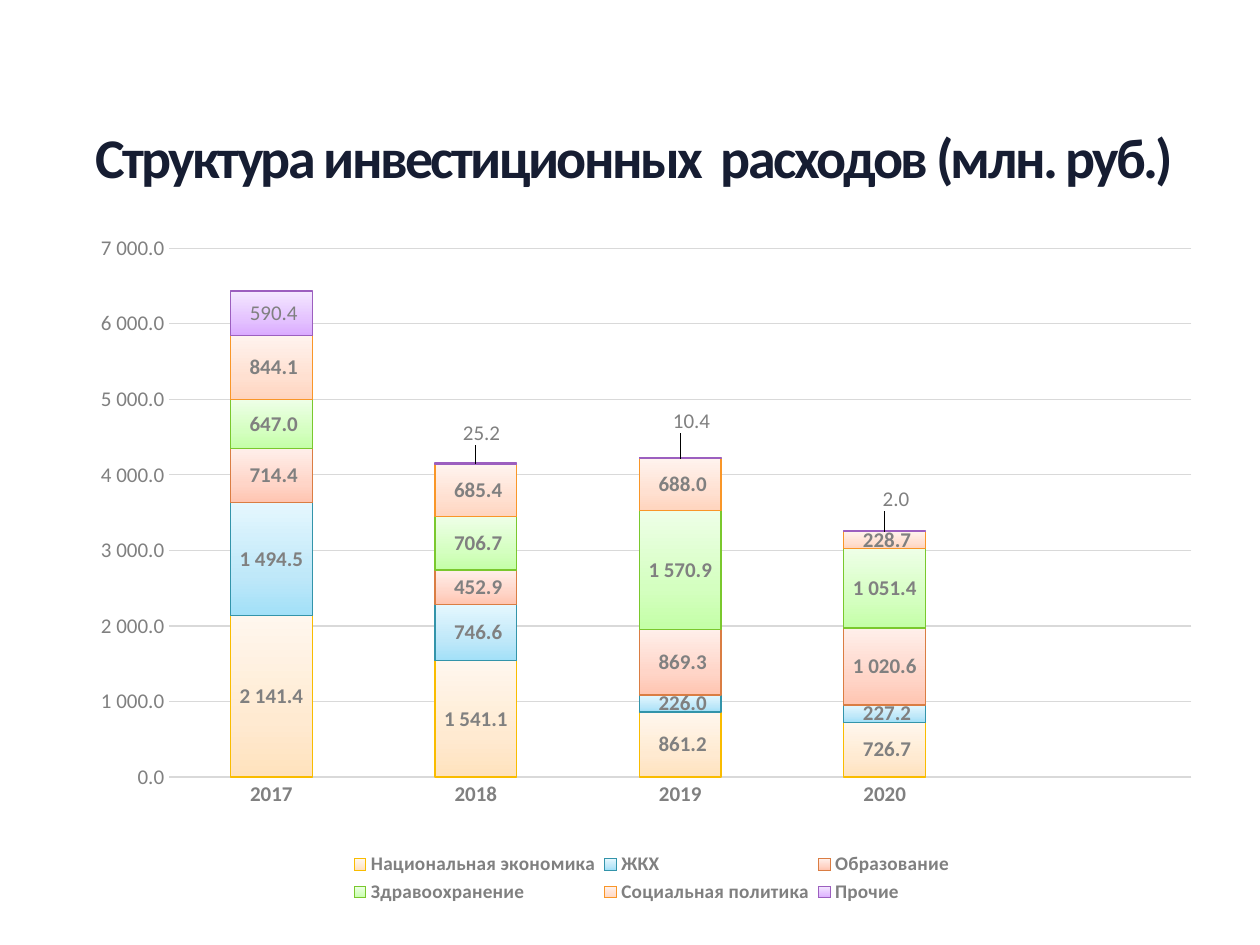
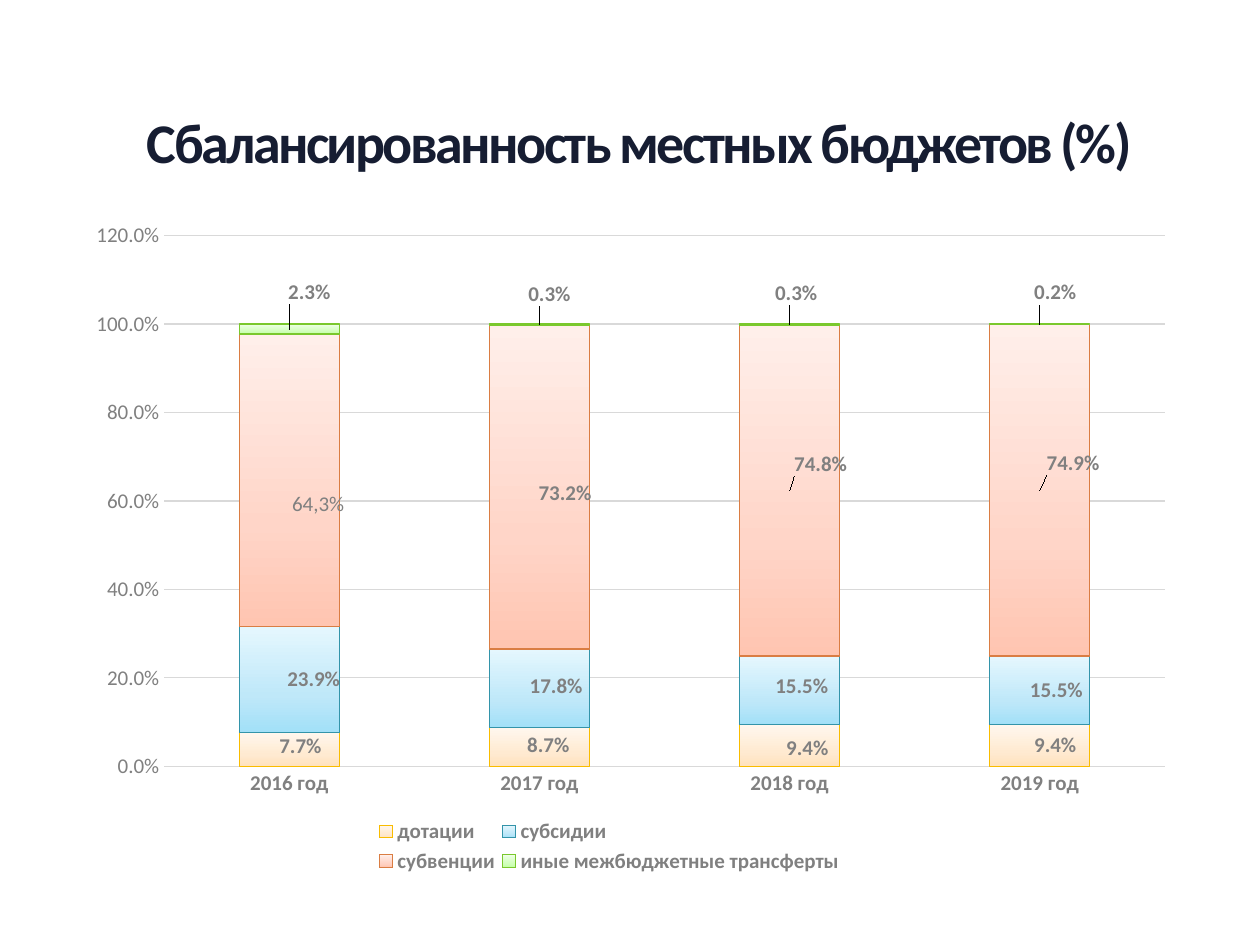
from pptx import Presentation
from pptx.chart.data import CategoryChartData
from pptx.dml.color import RGBColor
from pptx.enum.chart import XL_CHART_TYPE, XL_LEGEND_POSITION, XL_TICK_MARK
from pptx.enum.text import MSO_ANCHOR, MSO_AUTO_SIZE, PP_ALIGN
from pptx.oxml import parse_xml
from pptx.oxml.ns import nsdecls, qn
from pptx.util import Pt

STACKED = XL_CHART_TYPE.COLUMN_STACKED
LEGEND_BOTTOM = XL_LEGEND_POSITION.BOTTOM
NO_TICK = XL_TICK_MARK.NONE
CENTER = PP_ALIGN.CENTER
MIDDLE = MSO_ANCHOR.MIDDLE
NO_AUTOFIT = MSO_AUTO_SIZE.NONE

FONT = "Calibri"
GREY = RGBColor(0x80, 0x80, 0x80)
GRID = RGBColor(0xD9, 0xD9, 0xD9)
BLACK = RGBColor(0, 0, 0)
TITLE_STOPS = ((0, RGBColor(0x2E, 0x59, 0xB0)),
               (49, RGBColor(0x16, 0x1D, 0x32)),
               (100, BLACK))


def palette(line, *shades):
    """Pair an outline colour with the gradient stops of the fill."""
    colors = [RGBColor.from_string(shade) for shade in shades]
    return RGBColor.from_string(line), tuple(zip((0, 35, 100), colors))


SERIES_COLORS = (
    palette("F9BC00", "FFE2BD", "FFEAD1", "FFF7EE"),
    palette("3394AA", "A2E0F8", "BFE8F9", "E5F7FE"),
    palette("DA7D43", "FFC5B1", "FFD5C8", "FFEFEA"),
    palette("7AC82D", "C4FFA7", "D4FFC0", "EEFFE7"),
    palette("F99628", "FFD4BE", "FFE0D1", "FFF3EE"),
    palette("9C5FBF", "DAAAFF", "E4C2FF", "F4E8FF"),
)

INVESTMENT = {
    "title": "Структура инвестиционных  расходов (млн. руб.)",
    "title_box": (19.5, 66.25, 686, 50.5),
    "chart_box": (54, 116.5, 637, 402.5),
    "plot_area": (0.067, 0.063, 0.917, 0.751),
    "legend_area": (0.225, 0.915, 0.55, 0.085),
    "legend_size": 11,
    "number_format": r"#\ ##0.0",
    "maximum": 7000,
    "step": 1000,
    "categories": ("2017", "2018", "2019", "2020", ""),
    "series": (
        ("Национальная экономика", (2141.4, 1541.1, 861.2, 726.7, None)),
        ("ЖКХ", (1494.5, 746.6, 226, 227.2, None)),
        ("Образование", (714.4, 452.9, 869.3, 1020.6, None)),
        ("Здравоохранение", (647, 706.7, 1570.9, 1051.4, None)),
        ("Социальная политика", (844.1, 685.4, 688, 228.7, None)),
        ("Прочие", (590.4, 25.2, 10.4, 2, None)),
    ),
    "plain_series": ("Прочие",),
    # label shifts: series -> point -> fractions of the chart's width, height
    "label_shifts": {
        5: {1: (0.003, -0.044), 2: (0.008, -0.053), 3: (0.008, -0.045)},
    },
    "label_texts": {},
}

BUDGETS = {
    "title": "Сбалансированность местных бюджетов (%)",
    "title_box": (25, 54.75, 680.5, 57),
    "chart_box": (31, 116.5, 635, 385),
    "plot_area": (0.099, 0.047, 0.901, 0.788),
    "legend_area": (0.286, 0.907, 0.428, 0.093),
    "legend_size": 12,
    "number_format": "0.0%",
    "maximum": 1.2,
    "step": 0.2,
    "categories": [f"{year} год" for year in range(2016, 2020)],
    "series": (
        ("дотации", (0.077, 0.087, 0.094, 0.094)),
        ("субсидии", (0.239, 0.178, 0.155, 0.155)),
        ("субвенции", (0.661, 0.732, 0.748, 0.749)),
        ("иные межбюджетные трансферты", (0.023, 0.003, 0.003, 0.002)),
    ),
    "plain_series": (),
    "label_shifts": {
        0: {0: (0.01, -0.004), 1: (0.008, -0.003),
            2: (0.016, 0.004), 3: (0.014, 0)},
        1: {0: (0.022, 0), 1: (0.015, -0.004),
            2: (0.011, -0.006), 3: (0.015, -0.001)},
        2: {0: (0.026, 0.035), 1: (0.023, 0.009),
            2: (0.028, -0.04), 3: (0.03, -0.041)},
        3: {0: (0.018, -0.055), 1: (0.009, -0.045),
            2: (0.006, -0.047), 3: (0.014, -0.047)},
    },
    "label_texts": {(2, 0): "64,3%"},
}


def gradient(stops, angle):
    stop_xml = "".join(
        f'<a:gs pos="{position * 1000}"><a:srgbClr val="{color}"/></a:gs>'
        for position, color in stops)
    return parse_xml(
        f'<a:gradFill {nsdecls("a")} rotWithShape="1"><a:gsLst>{stop_xml}</a:gsLst>'
        f'<a:lin ang="{angle * 60000}" scaled="0"/></a:gradFill>')


def replace_solid_fill(properties, stops, angle):
    solid = properties.find(qn("a:solidFill"))
    properties.replace(solid, gradient(stops, angle))


def manual_layout(x, y, width=None, height=None, inner=False):
    """Chart layout: an edge-based area, or a shift if no size is given."""
    parts = []
    if inner:
        parts.append(("layoutTarget", "inner"))
    if width is not None:
        parts += [("xMode", "edge"), ("yMode", "edge")]
    parts += [("x", x), ("y", y)]
    if width is not None:
        parts += [("w", width), ("h", height)]
    body = "".join(f'<c:{tag} val="{value}"/>' for tag, value in parts)
    return parse_xml(f'<c:layout {nsdecls("c")}><c:manualLayout>{body}'
                     '</c:manualLayout></c:layout>')


def set_layout(parent, layout, index):
    for existing in parent.findall(qn("c:layout")):
        parent.remove(existing)
    parent.insert(index, layout)


def format_font(font, size=12, bold=False, color=GREY):
    font.name = FONT
    font.size = Pt(size)
    font.bold = bold
    font.color.rgb = color


def write_text(text_frame, text, size=12, bold=False, color=GREY):
    paragraph = text_frame.paragraphs[0]
    run = paragraph.add_run()
    run.text = text
    format_font(run.font, size, bold, color)
    return paragraph, run


def add_title(slide, text, box):
    title = slide.shapes.title
    title.left, title.top, title.width, title.height = map(Pt, box)
    frame = title.text_frame
    frame.margin_left = frame.margin_right = 0
    frame.margin_top = frame.margin_bottom = 0
    frame.word_wrap = True
    frame.auto_size = NO_AUTOFIT
    frame.vertical_anchor = MIDDLE
    paragraph, run = write_text(frame, text, size=32, bold=True)
    paragraph.alignment = CENTER
    paragraph.line_spacing = 0.9
    properties = run.font.fill and run._r.get_or_add_rPr()
    properties.set("spc", "-150")
    replace_solid_fill(properties, TITLE_STOPS, 90)


def format_axes(chart, content):
    category_axis, value_axis = chart.category_axis, chart.value_axis
    for axis in (category_axis, value_axis):
        axis.major_tick_mark = axis.minor_tick_mark = NO_TICK
        axis.format.line.fill.background()
        format_font(axis.tick_labels.font, bold=axis is category_axis)
    value_axis.minimum_scale = 0
    value_axis.maximum_scale = content["maximum"]
    value_axis.major_unit = content["step"]
    value_axis.tick_labels.number_format = content["number_format"]
    value_axis.tick_labels.number_format_is_linked = False
    value_axis.has_major_gridlines = True
    grid_line = value_axis.major_gridlines.format.line
    grid_line.color.rgb = GRID
    grid_line.width = Pt(0.75)


def format_series(series, series_xml, index, content):
    line_color, stops = SERIES_COLORS[index]
    series.format.fill.solid()
    series.format.fill.fore_color.rgb = stops[0][1]
    series.format.line.color.rgb = line_color
    series.format.line.width = Pt(0.75)
    replace_solid_fill(series_xml.find(qn("c:spPr")), stops, 270)

    bold = series.name not in content["plain_series"]
    labels = series.data_labels
    labels.show_value = True
    labels.number_format = content["number_format"]
    labels.number_format_is_linked = False
    format_font(labels.font, bold=bold)

    shifts = content["label_shifts"].get(index, {})
    for point, shift in shifts.items():
        label = series.points[point].data_label
        text = content["label_texts"].get((index, point))
        if text:
            write_text(label.text_frame, text)
        else:
            format_font(label.font, bold=bold)
        label_xml = series_xml.xpath(
            f"c:dLbls/c:dLbl[c:idx/@val='{point}']")[0]
        set_layout(label_xml, manual_layout(*shift), 1)


def add_stacked_chart(slide, content):
    chart_data = CategoryChartData(number_format=content["number_format"])
    chart_data.categories = content["categories"]
    for name, values in content["series"]:
        chart_data.add_series(name, values)
    chart = slide.shapes.add_chart(
        STACKED, *map(Pt, content["chart_box"]), chart_data).chart
    chart.has_title = False
    format_font(chart.font, size=10, color=BLACK)

    plot = chart.plots[0]
    plot.gap_width = 150
    plot.overlap = 100
    plot.vary_by_categories = False
    format_axes(chart, content)
    series_elements = chart.element.xpath(".//c:ser")
    for index, series in enumerate(plot.series):
        format_series(series, series_elements[index], index, content)

    chart.has_legend = True
    chart.legend.position = LEGEND_BOTTOM
    chart.legend.include_in_layout = False
    format_font(chart.legend.font, size=content["legend_size"], bold=True)
    plot_area = chart.element.xpath(".//c:plotArea")[0]
    legend = chart.element.xpath(".//c:legend")[0]
    set_layout(plot_area, manual_layout(*content["plot_area"], inner=True), 0)
    set_layout(legend, manual_layout(*content["legend_area"]), 1)


def add_chart_slide(presentation, content):
    title_only = presentation.slide_layouts[5]
    slide = presentation.slides.add_slide(title_only)
    add_title(slide, content["title"], content["title_box"])
    add_stacked_chart(slide, content)


def main():
    presentation = Presentation()
    presentation.slide_width, presentation.slide_height = Pt(720), Pt(540)
    for content in (INVESTMENT, BUDGETS):
        add_chart_slide(presentation, content)
    presentation.save("out.pptx")


if __name__ == "__main__":
    main()
